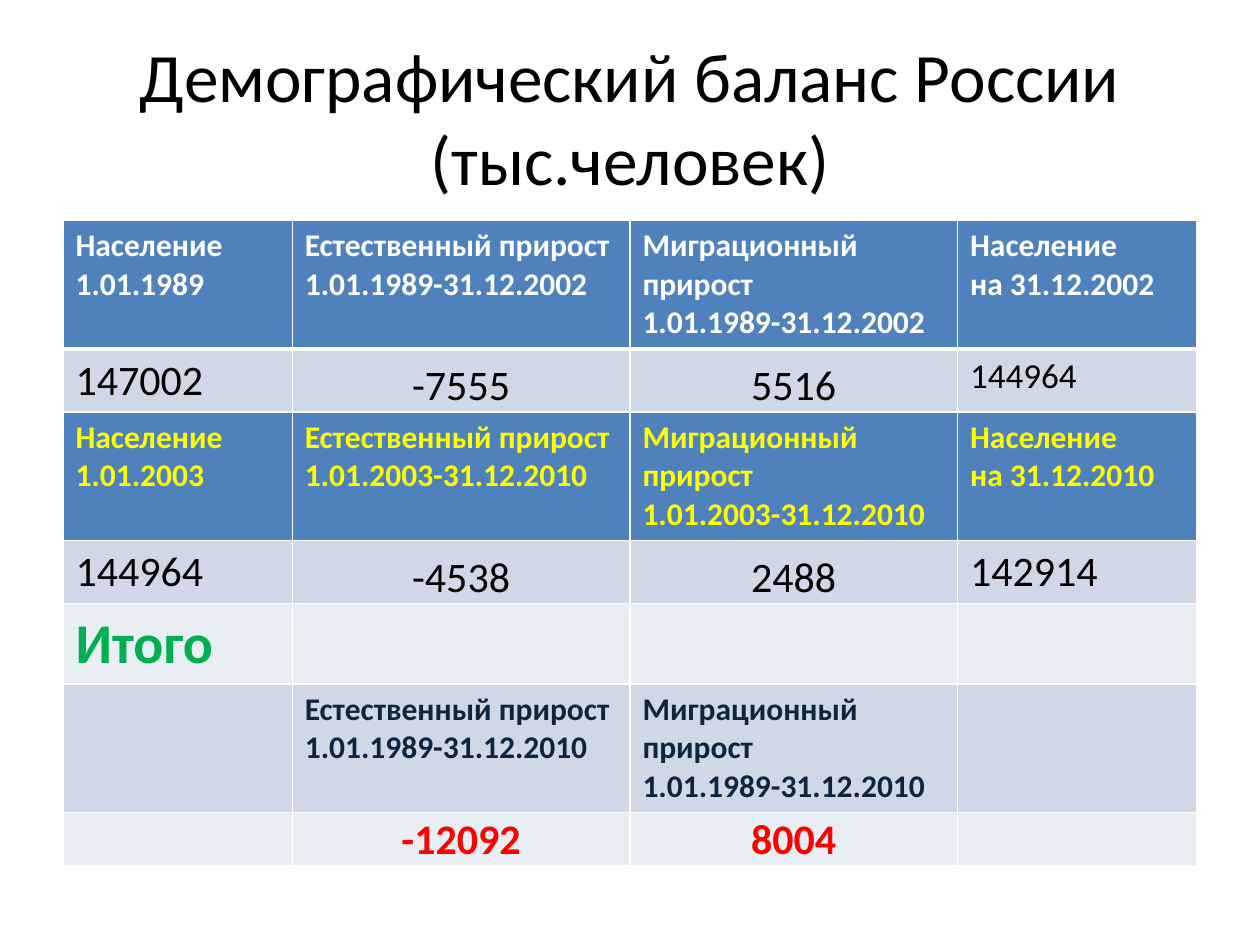
import pptx
import pptx.util
import pptx.dml.color
import pptx.enum.text
import pptx.oxml.ns
import lxml.etree

Inches, Pt = pptx.util.Inches, pptx.util.Pt
MSO_ANCHOR, PP_ALIGN = pptx.enum.text.MSO_ANCHOR, pptx.enum.text.PP_ALIGN

TITLE = "Демографический баланс России (тыс.человек)"


def period_headings(start, end):
    return [
        f"Население\n{start}",
        f"Естественный прирост {start}-{end}",
        f"Миграционный прирост\n{start}-{end}",
        f"Население\nна {end}",
    ]


# Row style, height, cell texts
BALANCE = [
    ("header", 1.02, period_headings("1.01.1989", "31.12.2002")),
    ("figures", 0.5, ["147002", "-7555", "5516", "144964"]),
    ("second_header", 1.02, period_headings("1.01.2003", "31.12.2010")),
    ("figures", 0.5, ["144964", "-4538", "2488", "142914"]),
    ("total", 0.64, ["Итого", "", "", ""]),
    ("total_header", 1.02,
     ["", *period_headings("1.01.1989", "31.12.2010")[1:3], ""]),
    ("total_figures", 0.42, ["", "-12092", "8004", ""]),
]
COLUMN_WIDTHS = [1.82, 2.68, 2.6, 1.9]
GROWTH_COLUMNS = (1, 2)
SMALLER_FIGURE = (1, 3)

THEME = {
    "font": "Calibri",
    "title": {"size": 39.6, "color": "000000", "bold": False},
    "smaller_size": 20,
    "border": "FFFFFF",
    "header": {"fill": "4F81BD", "size": 18, "color": "FFFFFF", "bold": True},
    "second_header": {"fill": "4F81BD", "size": 18, "color": "FFFF00", "bold": True},
    "figures": {"fill": "D0D8E8", "size": 24, "color": "000000", "bold": False},
    "total": {"fill": "E9EDF4", "size": 32, "color": "00B050", "bold": True},
    "total_header": {"fill": "D0D8E8", "size": 18, "color": "0F243E", "bold": True},
    "total_figures": {"fill": "E9EDF4", "size": 24, "color": "FF0000", "bold": True},
}


def rgb(value):
    return pptx.dml.color.RGBColor.from_string(value)


def format_text(frame, style, size=None, align=PP_ALIGN.LEFT):
    for paragraph in frame.paragraphs:
        paragraph.alignment = align
        for run in paragraph.runs:
            run.font.name = THEME["font"]
            run.font.size = Pt(size or style["size"])
            run.font.bold = style["bold"]
            run.font.color.rgb = rgb(style["color"])


def set_borders(cell, widths):
    """Insert the side lines ahead of the fill, as the schema requires."""
    properties = cell._tc.get_or_add_tcPr()
    for position, (side, width) in enumerate(widths.items()):
        line = lxml.etree.Element(
            pptx.oxml.ns.qn(f"a:ln{side}"), w=str(Pt(width)))
        fill = lxml.etree.SubElement(line, pptx.oxml.ns.qn("a:solidFill"))
        lxml.etree.SubElement(
            fill, pptx.oxml.ns.qn("a:srgbClr"), val=THEME["border"])
        properties.insert(position, line)


def add_title(slide):
    title = slide.shapes.add_textbox(
        Inches(0.5), Inches(0.3), Inches(9), Inches(1.25))
    frame = title.text_frame
    frame.word_wrap = True
    frame.vertical_anchor = MSO_ANCHOR.MIDDLE
    frame.text = TITLE
    format_text(frame, THEME["title"], align=PP_ALIGN.CENTER)


def fill_cell(cell, text, row, column, style_name):
    style = THEME[style_name]
    cell.fill.solid()
    cell.fill.fore_color.rgb = rgb(style["fill"])
    set_borders(cell, {
        "L": 1, "R": 1,
        "T": 3 if row == 1 else 1,
        "B": 3 if row == 0 else 1,
    })
    if not text:
        return
    cell.text_frame.text = text
    align = PP_ALIGN.LEFT
    if style_name.endswith("figures") and column in GROWTH_COLUMNS:
        align = PP_ALIGN.CENTER
        cell.vertical_anchor = MSO_ANCHOR.BOTTOM
        cell.margin_left = cell.margin_right = cell.margin_top = Inches(0.01)
        cell.margin_bottom = 0
    size = THEME["smaller_size"] if (row, column) == SMALLER_FIGURE else None
    format_text(cell.text_frame, style, size, align)


def add_balance_table(slide):
    table = slide.shapes.add_table(
        len(BALANCE), len(COLUMN_WIDTHS), Inches(0.5), Inches(1.75),
        Inches(sum(COLUMN_WIDTHS)),
        Inches(sum(height for _, height, _ in BALANCE))).table
    for column, width in zip(table.columns, COLUMN_WIDTHS):
        column.width = Inches(width)
    for row, (style_name, height, texts) in enumerate(BALANCE):
        table.rows[row].height = Inches(height)
        for column, text in enumerate(texts):
            fill_cell(table.cell(row, column), text, row, column, style_name)


def main():
    presentation = pptx.Presentation()
    presentation.slide_width = Inches(10)
    presentation.slide_height = Inches(7.5)
    slide = presentation.slides.add_slide(presentation.slide_layouts[6])
    add_title(slide)
    add_balance_table(slide)
    presentation.save("out.pptx")


if __name__ == "__main__":
    main()
